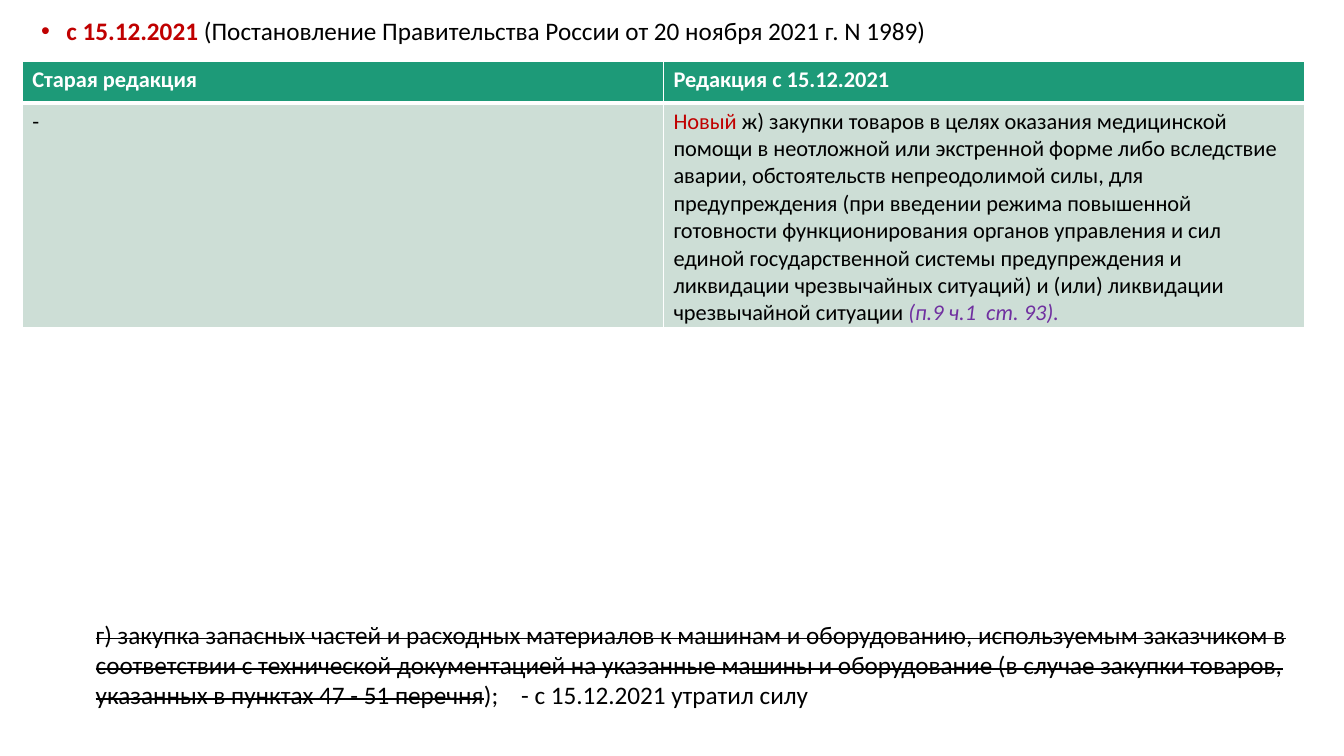
from lxml.etree import SubElement
from pptx import Presentation
from pptx.dml.color import RGBColor
from pptx.enum.text import MSO_AUTO_SIZE
from pptx.oxml.ns import qn
from pptx.util import Inches, Pt

BLACK, WHITE, RED, PURPLE = "000000", "FFFFFF", "C00000", "7030A0"
GREEN, PALE_GREEN = "1D9A78", "CDDED6"

HEADERS = ["Старая редакция", "Редакция с 15.12.2021"]
NEW_CLAUSE = (
    "ж) закупки товаров в целях оказания медицинской помощи в неотложной "
    "или экстренной форме либо вследствие аварии, обстоятельств непреодолимой "
    "силы, для предупреждения (при введении режима повышенной готовности "
    "функционирования органов управления и сил единой государственной системы "
    "предупреждения и ликвидации чрезвычайных ситуаций) и (или) ликвидации "
    "чрезвычайной ситуации "
)
REPEALED_CLAUSE = (
    "г) закупка запасных частей и расходных материалов к машинам и оборудованию, "
    "используемым заказчиком в соответствии с технической документацией на "
    "указанные машины и оборудование (в случае закупки товаров, указанных в "
    "пунктах 47 - 51 перечня"
)


def rgb(value):
    return RGBColor.from_string(value)


def add_run(p, text, size, color=BLACK, bold=False, italic=False, strike=False):
    r = p.add_run()
    r.text = text
    r.font.name = "Calibri"
    r.font.size = Pt(size)
    r.font.bold = bold
    r.font.italic = italic
    r.font.color.rgb = rgb(color)
    if strike:
        r._r.get_or_add_rPr().set("strike", "sngStrike")


def add_text_box(s, left, top, width, height):
    tf = s.shapes.add_textbox(
        Inches(left), Inches(top), Inches(width), Inches(height)
    ).text_frame
    tf.word_wrap = True
    return tf


def add_bullet(p, indent):
    pPr = p._p.get_or_add_pPr()
    pPr.set("marL", str(Inches(indent)))
    pPr.set("indent", str(-Inches(indent)))
    SubElement(pPr, qn("a:buFont"), typeface="Arial")
    SubElement(pPr, qn("a:buChar"), char="•")


def add_tab_stop(p, position):
    tabs = SubElement(p._p.get_or_add_pPr(), qn("a:tabLst"))
    SubElement(tabs, qn("a:tab"), pos=str(Inches(position)), algn="l")


def style_cell(cell, fill, top, bottom):
    tcPr = cell._tc.get_or_add_tcPr()
    for side, width in (("L", 1), ("R", 1), ("T", top), ("B", bottom)):
        ln = SubElement(tcPr, qn(f"a:ln{side}"), w=str(Pt(width)))
        SubElement(SubElement(ln, qn("a:solidFill")), qn("a:srgbClr"), val=WHITE)
    cell.fill.solid()
    cell.fill.fore_color.rgb = rgb(fill)


def add_heading(s):
    p = add_text_box(s, 0.31, 0.14, 11.5, 0.45).paragraphs[0]
    p.line_spacing = 0.9
    add_bullet(p, 0.25)
    add_run(p, "с 15.12.2021 ", 18, RED, bold=True)
    add_run(p, "(Постановление Правительства России от 20 ноября 2021 г. N 1989)", 18)


def add_comparison(s):
    table = s.shapes.add_table(
        2, 2, Inches(0.22), Inches(0.61), Inches(12.72), Inches(2.64)
    ).table
    table.rows[0].height = Inches(0.41)
    table.rows[1].height = Inches(2.23)
    for col, header in enumerate(HEADERS):
        style_cell(table.cell(0, col), GREEN, 1, 3)
        style_cell(table.cell(1, col), PALE_GREEN, 3, 1)
        p = table.cell(0, col).text_frame.paragraphs[0]
        add_run(p, header, 16, WHITE, bold=True)
    old, new = (table.cell(1, col).text_frame.paragraphs[0] for col in range(2))
    add_run(old, "-", 16)
    add_run(new, "Новый ", 16, RED)
    add_run(new, NEW_CLAUSE, 16)
    add_run(new, "(п.9 ч.1  ст. 93).", 16, PURPLE, italic=True)


def add_repealed(s):
    tf = add_text_box(s, 0.85, 6.09, 12.09, 1.01)
    tf.auto_size = MSO_AUTO_SIZE.SHAPE_TO_FIT_TEXT
    p = tf.paragraphs[0]
    add_tab_stop(p, 4.22)
    add_run(p, REPEALED_CLAUSE, 18, strike=True)
    add_run(p, ");\t- с 15.12.2021 утратил силу", 18)


def main():
    prs = Presentation()
    prs.slide_width = Inches(13.33)
    prs.slide_height = Inches(7.5)
    s = prs.slides.add_slide(prs.slide_layouts[6])
    add_heading(s)
    add_comparison(s)
    add_repealed(s)
    prs.save("out.pptx")


if __name__ == "__main__":
    main()
